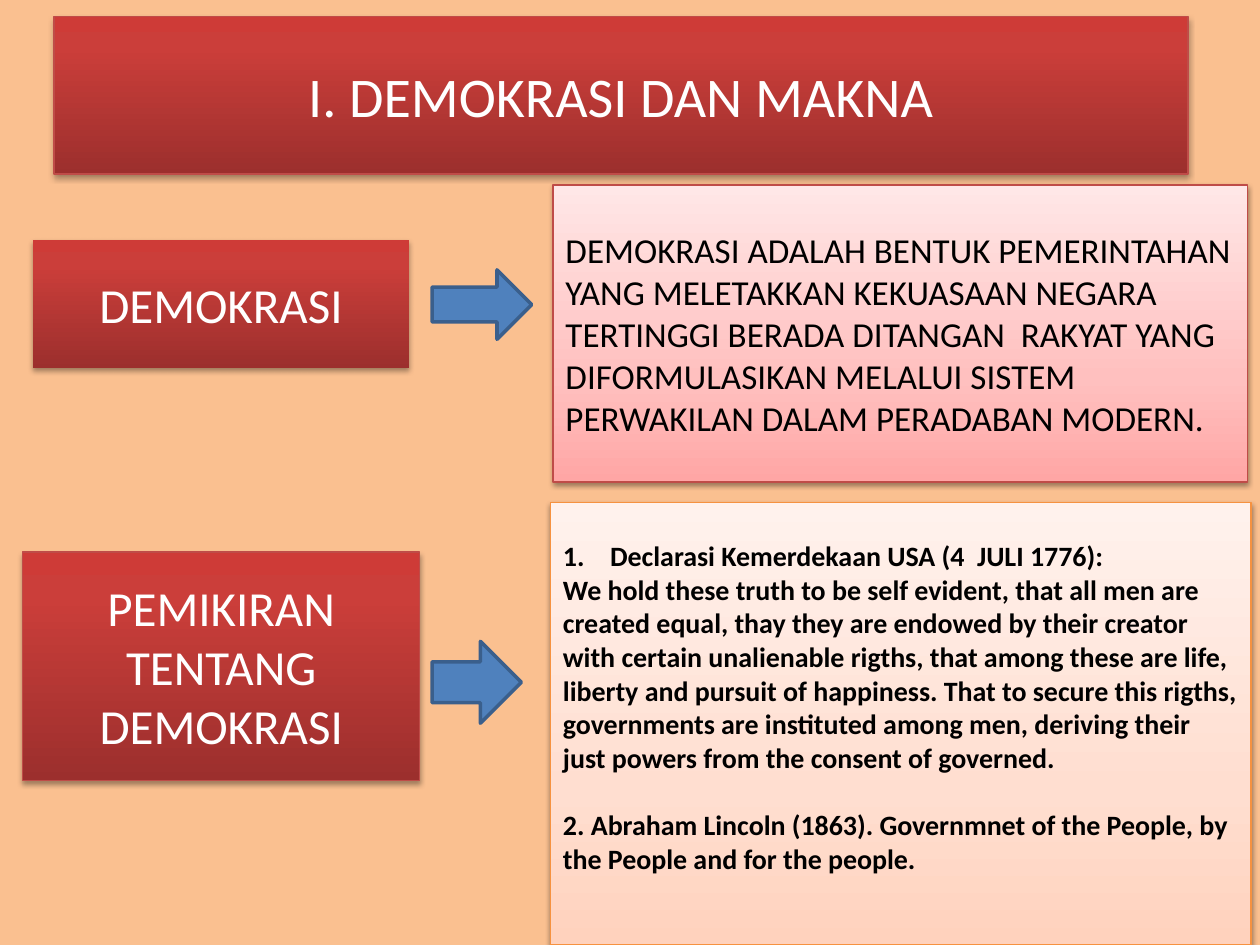
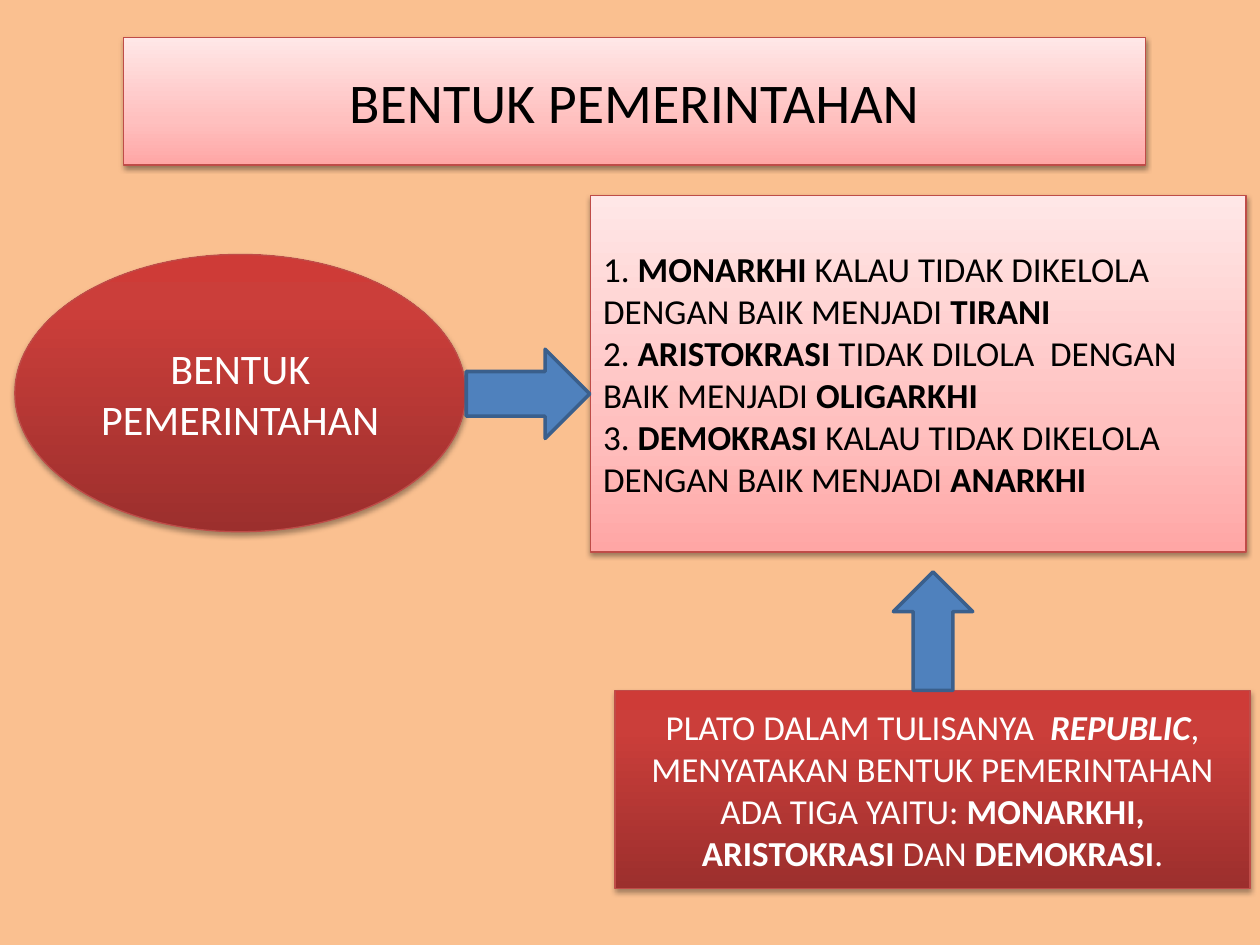
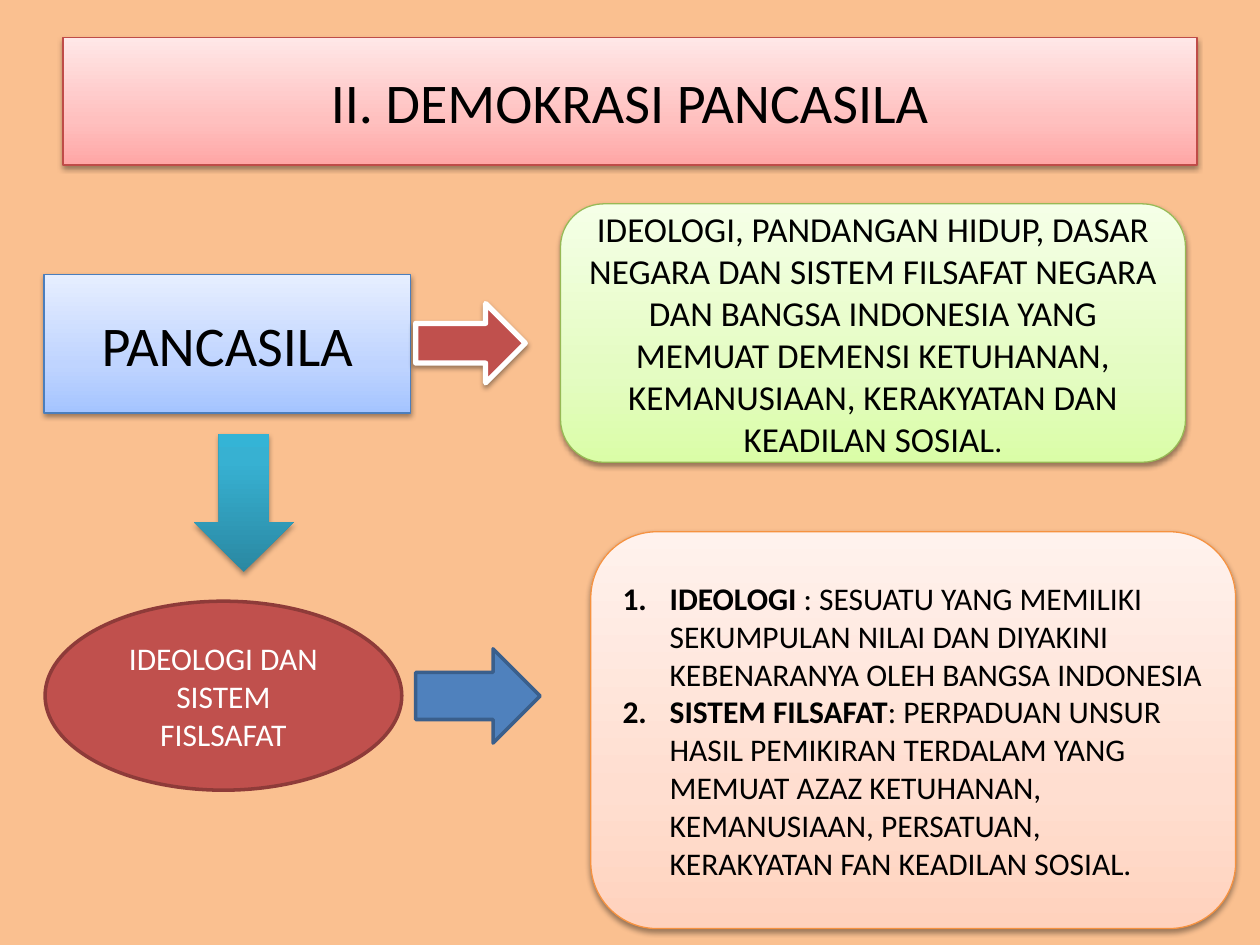
from copy import deepcopy
from dataclasses import dataclass, field
from typing import Optional

from lxml import etree
from pptx import Presentation
from pptx.dml.color import RGBColor
from pptx.enum.shapes import MSO_SHAPE
from pptx.enum.text import MSO_ANCHOR, PP_ALIGN
from pptx.oxml.ns import qn
from pptx.util import Cm, Pt

RECTANGLE = MSO_SHAPE.RECTANGLE
ROUNDED = MSO_SHAPE.ROUNDED_RECTANGLE
OVAL = MSO_SHAPE.OVAL
RIGHT_ARROW = MSO_SHAPE.RIGHT_ARROW
UP_ARROW = MSO_SHAPE.UP_ARROW
DOWN_ARROW = MSO_SHAPE.DOWN_ARROW
LEFT, CENTER = PP_ALIGN.LEFT, PP_ALIGN.CENTER
MIDDLE = MSO_ANCHOR.MIDDLE
BLANK_LAYOUT = 6


@dataclass(frozen=True)
class Shadow:
    opacity: int
    distance: float


@dataclass(frozen=True)
class Style:
    """One colour is a plain fill; (position, colour) stops run from bottom to top."""
    fill: object
    line: Optional[str] = None
    line_width: float = 0.75
    shadow: Optional[Shadow] = None
    text: str = "000000"


DEEP_SHADOW = Shadow(35, 1.8)
SOFT_SHADOW = Shadow(38, 1.6)


def strong_stops(bottom, middle, top):
    return ((0, bottom), (0.8, middle), (1, top))


def pale_stops(bottom, middle, top):
    return ((0, bottom), (0.35, middle), (1, top))


RED_STOPS = strong_stops("9C2F2D", "CB3E3A", "CE3B37")


@dataclass(frozen=True)
class Theme:
    font: str = "Calibri"
    background: str = "FAC090"
    title_size: int = 32
    label_size: int = 28
    oval_size: int = 24
    body_size: int = 20
    list_size: int = 18
    quote_size: int = 16
    red: Style = Style(RED_STOPS, "BF4C48", 0.75, DEEP_SHADOW, "FFFFFF")
    red_unlined: Style = Style(RED_STOPS, shadow=DEEP_SHADOW, text="FFFFFF")
    pink: Style = Style(pale_stops("FFA6A5", "FFC0BF", "FFE7E7"), "BF4C48", shadow=SOFT_SHADOW)
    peach: Style = Style(pale_stops("FFD2BD", "FFDED0", "FFF2ED"), "F69240", shadow=SOFT_SHADOW)
    blue: Style = Style(pale_stops("A4C4FF", "BFD4FF", "E6EEFF"), "4B7EBC", shadow=SOFT_SHADOW)
    green: Style = Style(pale_stops("DAFDA7", "E4FCC2", "F5FFE7"), "98B955", shadow=SOFT_SHADOW)
    teal: Style = Style(strong_stops("2A88A2", "37B1D2", "34B4D6"), shadow=DEEP_SHADOW)
    plain_blue: Style = Style("4F81BD", "3A5F8C", 2)
    plain_red: Style = Style("C0504D", "8E3B39", 2, text="FFFFFF")
    outlined_red: Style = Style("C0504D", "FFFFFF", 3, SOFT_SHADOW)


THEME = Theme()


@dataclass
class Run:
    text: str
    bold: bool = False
    italic: bool = False
    size: Optional[int] = None


@dataclass
class Paragraph:
    runs: list = field(default_factory=list)
    bold: bool = False
    numbered: bool = False
    space_before: float = 0


def bold(text):
    return Run(text, bold=True)


def rgb(colour):
    return RGBColor.from_string(colour)


def apply_fill(shape, fill):
    if isinstance(fill, str):
        shape.fill.solid()
        shape.fill.fore_color.rgb = rgb(fill)
        return
    shape.fill.gradient()
    shape.fill.gradient_angle = 90
    stop_list = shape._element.spPr.find(".//" + qn("a:gsLst"))
    stop_list.append(deepcopy(stop_list[-1]))
    for stop, (position, colour) in zip(shape.fill.gradient_stops, fill):
        stop.position = position
        stop.color.rgb = rgb(colour)


def apply_shadow(shape, shadow):
    shape.shadow.inherit = False
    if shadow is None:
        return
    effects = shape._element.spPr.find(qn("a:effectLst"))
    outer = etree.SubElement(effects, qn("a:outerShdw"), blurRad=str(Pt(3.1)),
                             dist=str(Pt(shadow.distance)), dir="5400000", rotWithShape="0")
    colour = etree.SubElement(outer, qn("a:srgbClr"), val="000000")
    etree.SubElement(colour, qn("a:alpha"), val=str(shadow.opacity * 1000))


def add_figure(slide, kind, box, style):
    """Add a styled preset shape; box is left, top, width, height in centimetres."""
    shape = slide.shapes.add_shape(kind, *map(Cm, box))
    apply_fill(shape, style.fill)
    if style.line:
        shape.line.color.rgb = rgb(style.line)
        shape.line.width = Pt(style.line_width)
    else:
        shape.line.fill.background()
    apply_shadow(shape, style.shadow)
    return shape


def number_paragraph(paragraph):
    properties = paragraph._p.get_or_add_pPr()
    properties.set("marL", str(Cm(0.95)))
    properties.set("indent", str(-Cm(0.95)))
    etree.SubElement(properties, qn("a:buFont"), typeface="+mj-lt")
    etree.SubElement(properties, qn("a:buAutoNum"), type="arabicPeriod")


def write_paragraph(paragraph, content, size, colour, alignment):
    if content.numbered:
        number_paragraph(paragraph)
    paragraph.alignment = alignment
    if content.space_before:
        paragraph.space_before = Pt(content.space_before)
    font = paragraph.font
    font.name, font.size, font.bold = THEME.font, Pt(size), content.bold
    font.color.rgb = rgb(colour)
    for piece in content.runs:
        run = paragraph.add_run()
        run.text = piece.text
        if piece.bold:
            run.font.bold = True
        if piece.italic:
            run.font.italic = True
        if piece.size:
            run.font.size = Pt(piece.size)


def add_panel(slide, kind, box, style, size, contents, alignment=CENTER):
    """Add a figure with text, given as one string or a list of Paragraph."""
    shape = add_figure(slide, kind, box, style)
    frame = shape.text_frame
    frame.word_wrap = True
    frame.vertical_anchor = MIDDLE
    if isinstance(contents, str):
        contents = [Paragraph([Run(contents)])]
    for index, content in enumerate(contents):
        paragraph = frame.add_paragraph() if index else frame.paragraphs[0]
        write_paragraph(paragraph, content, size, style.text, alignment)
    return shape


def add_title(slide, box, style, text):
    add_panel(slide, RECTANGLE, box, style, THEME.title_size, text)


def add_slide(presentation):
    slide = presentation.slides.add_slide(presentation.slide_layouts[BLANK_LAYOUT])
    slide.background.fill.solid()
    slide.background.fill.fore_color.rgb = rgb(THEME.background)
    return slide


def build_meaning(slide):
    add_title(slide, (1.09, 0.33, 22.86, 3.18), THEME.red, "I. DEMOKRASI DAN MAKNA")
    add_panel(slide, RECTANGLE, (0.66, 4.83, 7.59, 2.59), THEME.red_unlined,
              THEME.label_size, "DEMOKRASI")
    add_panel(slide, RECTANGLE, (11.15, 3.73, 14, 5.99), THEME.pink, THEME.body_size,
              "DEMOKRASI ADALAH BENTUK PEMERINTAHAN YANG MELETAKKAN KEKUASAAN NEGARA "
              "TERTINGGI BERADA DITANGAN  RAKYAT YANG DIFORMULASIKAN MELALUI SISTEM "
              "PERWAKILAN DALAM PERADABAN MODERN.", LEFT)
    quotes = [
        Paragraph([Run("Declarasi Kemerdekaan USA (4  JULI 1776):")], bold=True, numbered=True),
        Paragraph([Run("We hold these truth to be self evident, that all men are created equal, "
                       "thay they are endowed by their creator with certain unalienable rigths, "
                       "that among these are life, liberty and pursuit of happiness. That to "
                       "secure this rigths, governments are instituted among men, deriving their "
                       "just powers from the consent of governed.")], bold=True),
        Paragraph([Run("2. Abraham Lincoln (1863). Governmnet of the People, by the People "
                       "and for the people.")], bold=True, space_before=19.2),
    ]
    panel = add_panel(slide, RECTANGLE, (11.1, 10.13, 14.12, 8.92), THEME.peach,
                      THEME.quote_size, quotes, LEFT)
    panel.text_frame.margin_bottom = Cm(0.81)
    add_panel(slide, RECTANGLE, (0.46, 11.13, 8, 4.6), THEME.red, THEME.label_size,
              "PEMIKIRAN TENTANG DEMOKRASI")
    add_figure(slide, RIGHT_ARROW, (8.71, 5.44, 2.01, 1.4), THEME.plain_blue)
    add_figure(slide, RIGHT_ARROW, (8.71, 12.93, 1.8, 1.65), THEME.plain_blue)


def build_government_forms(slide):
    add_title(slide, (2.49, 0.76, 20.6, 2.57), THEME.pink, "BENTUK PEMERINTAHAN")
    add_panel(slide, OVAL, (0.3, 5.13, 9.09, 5.59), THEME.red, THEME.oval_size,
              "BENTUK PEMERINTAHAN")
    declines = [
        ("MONARKHI", " KALAU TIDAK DIKELOLA DENGAN BAIK MENJADI ", "TIRANI"),
        ("ARISTOKRASI", " TIDAK DILOLA  DENGAN BAIK MENJADI ", "OLIGARKHI"),
        ("DEMOKRASI", " KALAU TIDAK DIKELOLA DENGAN BAIK MENJADI ", "ANARKHI"),
    ]
    forms = [Paragraph([Run(f"{number}. "), bold(form), Run(cause), bold(result)])
             for number, (form, cause, result) in enumerate(declines, 1)]
    add_panel(slide, RECTANGLE, (11.91, 3.94, 13.21, 7.19), THEME.pink, THEME.body_size,
              forms, LEFT)
    plato = Paragraph([
        Run("PLATO DALAM TULISANYA  "), Run("REPUBLIC", bold=True, italic=True),
        Run(", MENYATAKAN BENTUK PEMERINTAHAN ADA TIGA YAITU: "),
        bold("MONARKHI, ARISTOKRASI"), Run(" DAN "), bold("DEMOKRASI"), Run("."),
    ])
    add_panel(slide, RECTANGLE, (12.4, 13.92, 12.8, 3.99), THEME.red, THEME.body_size, [plato])
    add_figure(slide, RIGHT_ARROW, (9.4, 7.04, 2.49, 1.8), THEME.plain_blue)
    add_figure(slide, UP_ARROW, (18.01, 11.53, 1.6, 2.39), THEME.plain_blue)


def build_pancasila(slide):
    add_title(slide, (1.27, 0.76, 22.86, 2.57), THEME.pink, "II. DEMOKRASI PANCASILA")
    add_panel(slide, RECTANGLE, (0.89, 5.54, 7.39, 2.79), THEME.blue, THEME.title_size,
              "PANCASILA")
    meaning = Paragraph([
        Run("IDEOLOGI, PANDANGAN HIDUP, DASAR NEGARA DAN SISTEM FILSAFAT NEGARA DAN BANGSA "
            "INDONESIA YANG MEMUAT DEMENSI KETUHANAN, KEMANUSIAAN, KERAKYATAN DAN KEADILAN "
            "SOSIAL"),
        Run(".", size=THEME.list_size),
    ])
    add_panel(slide, ROUNDED, (11.3, 4.11, 12.6, 5.21), THEME.green, THEME.body_size, [meaning])
    definitions = [
        ("IDEOLOGI", " : SESUATU YANG MEMILIKI SEKUMPULAN NILAI DAN DIYAKINI KEBENARANYA "
                     "OLEH BANGSA INDONESIA"),
        ("SISTEM FILSAFAT", ": PERPADUAN UNSUR HASIL PEMIKIRAN TERDALAM YANG MEMUAT AZAZ "
                            "KETUHANAN, KEMANUSIAAN, PERSATUAN, KERAKYATAN FAN KEADILAN SOSIAL."),
    ]
    add_panel(slide, ROUNDED, (11.91, 10.72, 13, 8), THEME.peach, THEME.list_size,
              [Paragraph([bold(term), Run(text)], numbered=True) for term, text in definitions],
              LEFT)
    add_panel(slide, OVAL, (0.91, 12.12, 7.19, 3.81), THEME.plain_red, THEME.list_size,
              "IDEOLOGI DAN SISTEM FISLSAFAT")
    add_figure(slide, DOWN_ARROW, (3.91, 8.74, 2.01, 2.79), THEME.teal)
    add_figure(slide, RIGHT_ARROW, (8.38, 6.12, 2.21, 1.6), THEME.outlined_red)
    add_figure(slide, RIGHT_ARROW, (8.38, 13.08, 2.51, 1.9), THEME.plain_blue)


def main():
    presentation = Presentation()
    presentation.slide_width, presentation.slide_height = Cm(25.4), Cm(19.05)
    for build in (build_meaning, build_government_forms, build_pancasila):
        build(add_slide(presentation))
    presentation.save("out.pptx")


if __name__ == "__main__":
    main()
